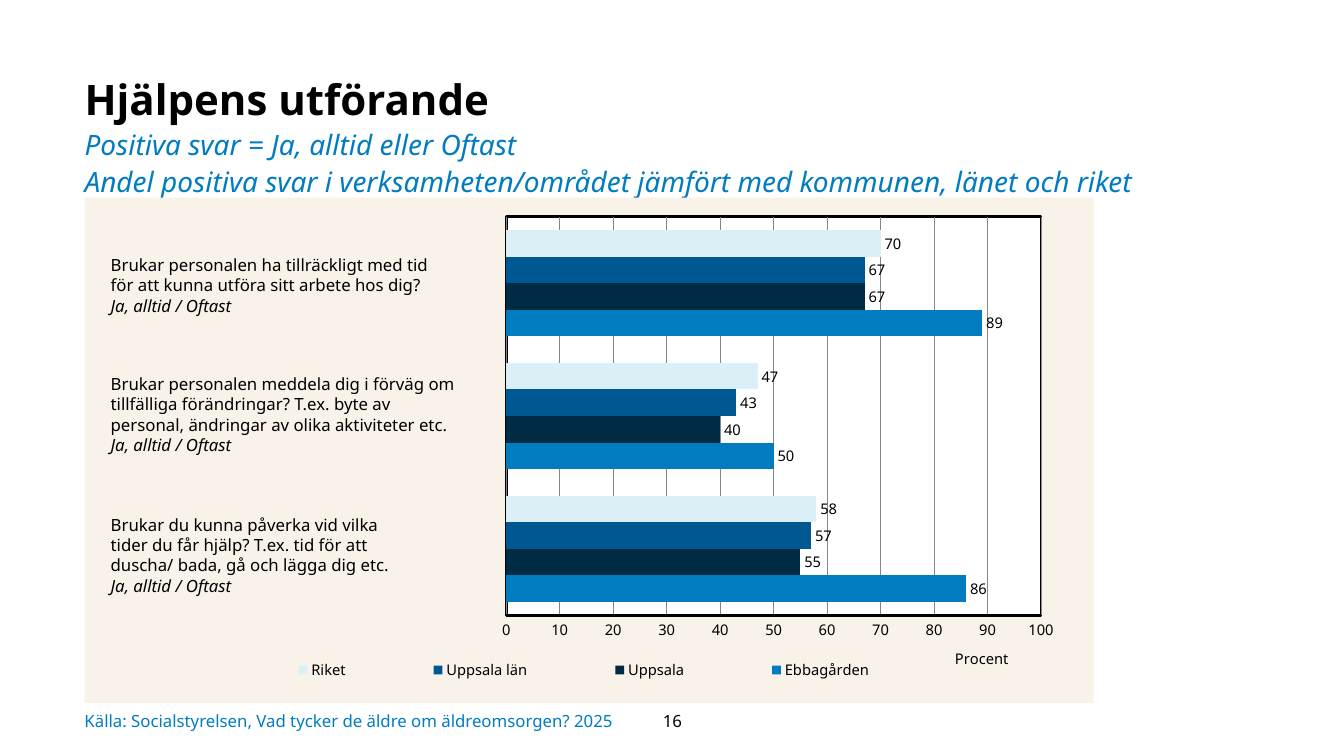
from dataclasses import dataclass

from pptx import Presentation
from pptx.chart.data import CategoryChartData
from pptx.dml.color import RGBColor
from pptx.enum.chart import XL_CHART_TYPE, XL_LABEL_POSITION, XL_LEGEND_POSITION, XL_TICK_MARK
from pptx.enum.text import MSO_ANCHOR, MSO_AUTO_SIZE, PP_ALIGN
from pptx.oxml import parse_xml
from pptx.oxml.ns import nsdecls, qn
from pptx.util import Cm, Pt

FONT = "Noto Sans"
BLACK = RGBColor(0x00, 0x00, 0x00)
BLUE = RGBColor(0x01, 0x7C, 0xC1)
NAVY = RGBColor(0x00, 0x2B, 0x45)
MID_BLUE = RGBColor(0x00, 0x58, 0x92)
PALE_BLUE = RGBColor(0xDB, 0xF0, 0xF6)
CREAM = RGBColor(0xF8, 0xF2, 0xE8)
WHITE = RGBColor(0xFF, 0xFF, 0xFF)
GREY = RGBColor(0x86, 0x86, 0x86)

BAR_CLUSTERED = XL_CHART_TYPE.BAR_CLUSTERED
OUTSIDE_END = XL_LABEL_POSITION.OUTSIDE_END
LEGEND_BOTTOM = XL_LEGEND_POSITION.BOTTOM
NO_TICK = XL_TICK_MARK.NONE
TOP, MIDDLE = MSO_ANCHOR.TOP, MSO_ANCHOR.MIDDLE
NO_FIT, GROW = MSO_AUTO_SIZE.NONE, MSO_AUTO_SIZE.SHAPE_TO_FIT_TEXT
LEFT, CENTER = PP_ALIGN.LEFT, PP_ALIGN.CENTER

MARGIN = Cm(2.13)
FOOTER_TOP, FOOTER_HEIGHT = Cm(17.65), Cm(1.02)
ANSWER = "Ja, alltid / Oftast"


@dataclass
class Question:
    top: float
    width: float
    height: float
    lines: list[str]


@dataclass
class Group:
    name: str
    values: list[int]
    color: RGBColor


QUESTIONS = [
    Question(6.3, 11.99, 2.24, ["Brukar personalen ha tillräckligt med tid",
                                "för att kunna utföra sitt arbete hos dig?"]),
    Question(9.3, 9.45, 2.31, ["Brukar personalen meddela dig i förväg om tillfälliga "
                               "förändringar? T.ex. byte av personal, ändringar av "
                               "olika aktiviteter etc."]),
    Question(12.85, 7.54, 2.31, ["Brukar du kunna påverka vid vilka tider du får hjälp? "
                                 "T.ex. tid för att duscha/ bada, gå och lägga dig etc."]),
]
GROUPS = [
    Group("Ebbagården", [86, 50, 89], BLUE),
    Group("Uppsala", [55, 40, 67], NAVY),
    Group("Uppsala län", [57, 43, 67], MID_BLUE),
    Group("Riket", [58, 47, 70], PALE_BLUE),
]


def set_font(font, size: float, color: RGBColor = BLACK, bold: bool = False) -> None:
    font.name, font.size, font.bold = FONT, Pt(size), bold
    font.color.rgb = color


def add_text(slide, left: int, top: int, width: int, height: int, lines: list[str],
             color: RGBColor = BLACK, align=LEFT, anchor=TOP):
    tf = slide.shapes.add_textbox(left, top, width, height).text_frame
    tf.word_wrap = True
    tf.vertical_anchor = anchor
    tf.text = "\n".join(lines)
    for p in tf.paragraphs:
        p.alignment = align
        set_font(p.font, 12, color)
    return tf


def set_layout(parent, index: int, **position: float) -> None:
    """Place a chart part by fractions of the chart area."""
    for old in parent.findall(qn("c:layout")):
        parent.remove(old)
    target = '<c:layoutTarget val="inner"/>' if parent.tag == qn("c:plotArea") else ""
    modes = "".join(f'<c:{k}Mode val="edge"/>' for k in position if k in "xy")
    sizes = "".join(f'<c:{k} val="{v}"/>' for k, v in position.items())
    parent.insert(index, parse_xml(
        f'<c:layout {nsdecls("c")}><c:manualLayout>{target}{modes}{sizes}'
        "</c:manualLayout></c:layout>"))


def area_format(fill: RGBColor, line: str):
    return parse_xml(
        f'<c:spPr {nsdecls("c", "a")}><a:solidFill><a:srgbClr val="{fill}"/></a:solidFill>'
        f"{line}</c:spPr>")


def add_title(slide) -> None:
    title = slide.shapes.title
    title.left, title.top, title.width, title.height = MARGIN, Cm(1.73), Cm(27.58), Cm(3.07)
    tf = title.text_frame
    tf.auto_size, tf.word_wrap, tf.vertical_anchor = NO_FIT, True, TOP
    tf.margin_left = tf.margin_top = 0
    p = tf.paragraphs[0]
    p.alignment, p.line_spacing = LEFT, 1.1
    r = p.add_run()
    r.text = "Hjälpens utförande"
    set_font(r.font, 30, bold=True)
    for line in ("Positiva svar = Ja, alltid eller Oftast",
                 "Andel positiva svar i verksamheten/området jämfört med kommunen, "
                 "länet och riket"):
        p.add_line_break()
        r = p.add_run()
        r.text = line
        set_font(r.font, 20, BLUE)
        r.font.italic = True


def add_bar_chart(slide) -> None:
    data = CategoryChartData()
    data.categories = ["1", "2", "3"]
    for group in GROUPS:
        data.add_series(group.name, group.values)
    chart = slide.shapes.add_chart(BAR_CLUSTERED, MARGIN, Cm(4.98), Cm(25.43), Cm(12.73),
                                   data).chart
    chart.has_title = False
    set_font(chart.font, 10.5)

    # Bars and value labels
    plot = chart.plots[0]
    plot.gap_width, plot.overlap, plot.vary_by_categories = 100, 0, False
    for group, series in zip(GROUPS, plot.series):
        series.format.fill.solid()
        series.format.fill.fore_color.rgb = group.color
        labels = series.data_labels
        labels.show_value, labels.position = True, OUTSIDE_END
        set_font(labels.font, 10.5)

    # Axes
    chart.category_axis.visible = False
    axis = chart.value_axis
    axis.minimum_scale, axis.maximum_scale, axis.major_unit = 0, 100, 10
    axis.major_tick_mark = axis.minor_tick_mark = NO_TICK
    axis.format.line.color.rgb, axis.format.line.width = BLACK, Pt(2)
    grid = axis.major_gridlines.format.line
    grid.color.rgb, grid.width = GREY, Pt(0.75)
    set_font(axis.tick_labels.font, 10.5)
    tf = axis.axis_title.text_frame
    tf.text = "Procent"
    set_font(tf.paragraphs[0].font, 10.5)

    # Legend
    chart.has_legend = True
    chart.legend.position, chart.legend.include_in_layout = LEGEND_BOTTOM, False
    set_font(chart.legend.font, 10.5)

    # Backgrounds and placement of the chart parts
    body = chart.element.find(qn("c:chart"))
    area = body.find(qn("c:plotArea"))
    body.addnext(area_format(CREAM, "<a:ln><a:noFill/></a:ln>"))
    area.append(area_format(WHITE, f'<a:ln w="{Pt(2)}"><a:solidFill><a:srgbClr val="{BLACK}"/>'
                                   "</a:solidFill></a:ln>"))
    set_layout(area, 0, x=0.418, y=0.038, w=0.53, h=0.789)
    set_layout(body.find(qn("c:legend")), 1, x=0.13, y=0.9, w=0.73, h=0.07)
    set_layout(area.find(qn("c:valAx")).find(qn("c:title")), 1, x=0.86, y=0.885)


def main() -> None:
    prs = Presentation()
    prs.slide_width, prs.slide_height = Cm(33.87), Cm(19.05)
    slide = prs.slides.add_slide(prs.slide_layouts[5])
    add_title(slide)
    add_bar_chart(slide)

    # Questions beside the bars
    for q in QUESTIONS:
        tf = add_text(slide, Cm(2.54), Cm(q.top), Cm(q.width), Cm(q.height),
                      [*q.lines, ANSWER])
        tf.auto_size = GROW
        tf.paragraphs[-1].font.italic = True

    # Footer
    add_text(slide, Cm(15.65), FOOTER_TOP, Cm(2.59), FOOTER_HEIGHT, ["16"],
             align=CENTER, anchor=MIDDLE)
    tf = add_text(slide, MARGIN, FOOTER_TOP, Cm(22.94), FOOTER_HEIGHT,
                  ["Källa: Socialstyrelsen, Vad tycker de äldre om äldreomsorgen? 2025"],
                  BLUE, anchor=MIDDLE)
    tf.margin_left = tf.margin_top = tf.margin_right = tf.margin_bottom = 0

    prs.save("out.pptx")


if __name__ == "__main__":
    main()
